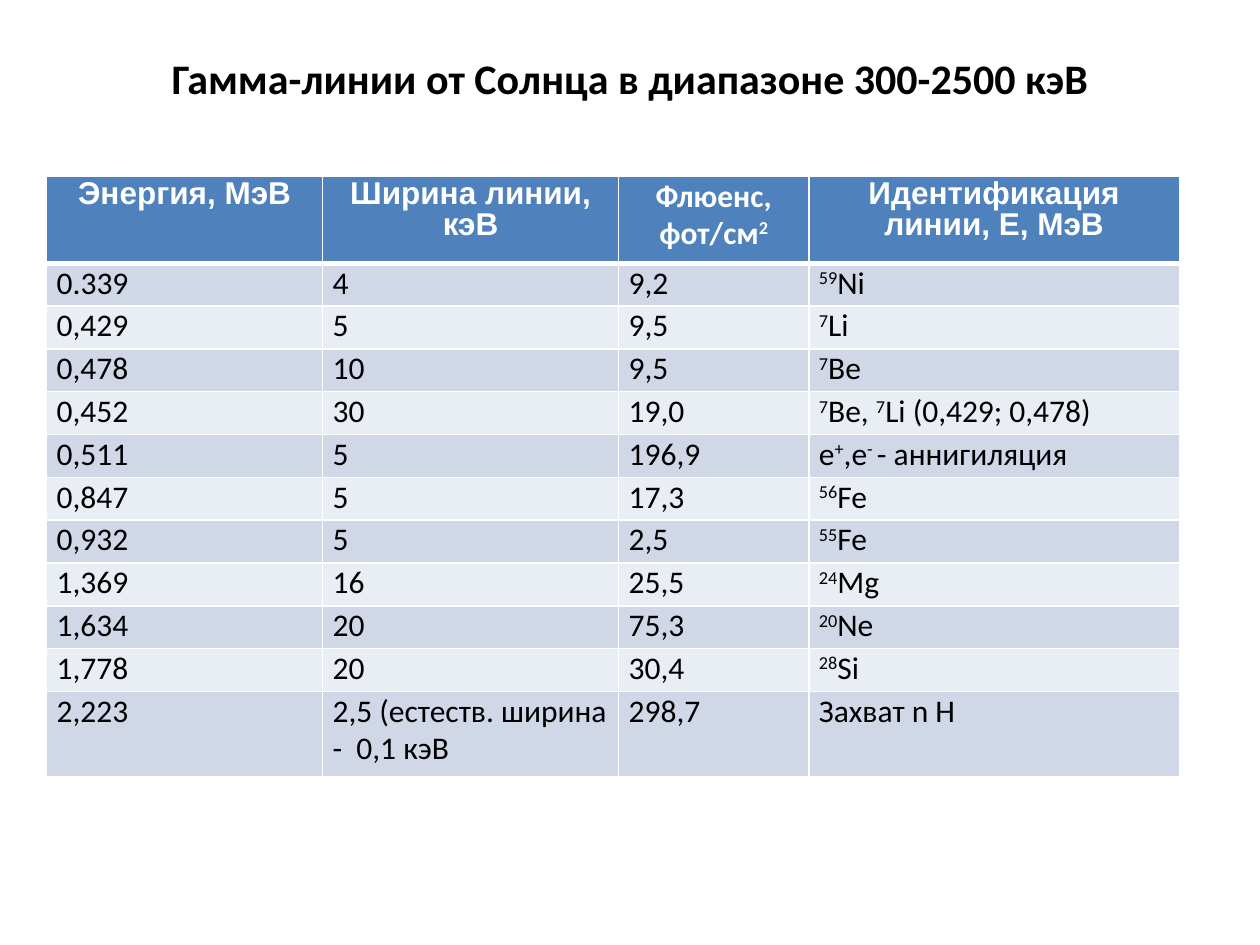
from lxml import etree
from pptx import Presentation
from pptx import util as u
from pptx.dml.color import RGBColor
from pptx.enum import text
from pptx.oxml.ns import qn

BLACK = RGBColor(0x00, 0x00, 0x00)
WHITE = RGBColor(0xFF, 0xFF, 0xFF)
HEADER_BLUE = RGBColor(0x4F, 0x81, 0xBD)
BAND_DARK = RGBColor(0xD0, 0xD8, 0xE8)
BAND_LIGHT = RGBColor(0xE9, 0xED, 0xF4)

# Text between a pair of ^ marks is superscript
HEADINGS = ["Энергия, МэВ", "Ширина линии, кэВ", "Флюенс, фот/см^2^",
            "Идентификация линии, Е, МэВ"]
GAMMA_LINES = [
    ["0.339", "4", "9,2", "^59^Ni"],
    ["0,429", "5", "9,5", "^7^Li"],
    ["0,478", "10", "9,5", "^7^Be"],
    ["0,452", "30", "19,0", "^7^Be, ^7^Li (0,429; 0,478)"],
    ["0,511", "5", "196,9", "e^+^,e^- ^- аннигиляция"],
    ["0,847", "5", "17,3", "^56^Fe"],
    ["0,932", "5", "2,5", "^55^Fe"],
    ["1,369", "16", "25,5", "^24^Mg"],
    ["1,634", "20", "75,3", "^20^Ne"],
    ["1,778", "20", "30,4", "^28^Si"],
    ["2,223", "2,5 (естеств. ширина -  0,1 кэВ", "298,7", "Захват n H"],
]
COLUMN_WIDTHS = [2.19, 2.35, 1.51, 2.94]
ROW_HEIGHTS = [0.69] + [0.34] * 10 + [0.68]


def set_values(target, values):
    for name, value in values.items():
        setattr(target, name, value)


class SlideBuilder:
    title_font = {"name": "Calibri", "size": u.Pt(24), "bold": True}
    body_font = {"name": "Calibri", "size": u.Pt(18), "bold": False}
    heading_font = {**body_font, "bold": True}
    center = text.PP_ALIGN.CENTER

    def __init__(self, deck):
        self.page = deck.slides.add_slide(deck.slide_layouts[5])

    def fill_para(self, para, content, font, color, layout):
        set_values(para, layout)
        for index, piece in enumerate(content.split("^")):
            if not piece:
                continue
            span = para.add_run()
            span.text = piece
            set_values(span.font, font)
            span.font.color.rgb = color
            if index % 2:
                span._r.get_or_add_rPr().set("baseline", "30000")

    def title(self, content, left, top, width, height):
        box = self.page.shapes.title
        set_values(box, {"left": u.Inches(left), "top": u.Inches(top),
                         "width": u.Inches(width), "height": u.Inches(height)})
        set_values(box.text_frame, {"word_wrap": True,
                                    "vertical_anchor": text.MSO_ANCHOR.MIDDLE})
        self.fill_para(box.text_frame.paragraphs[0], content, self.title_font,
                       BLACK, {"alignment": self.center})

    def borders(self, cell, widths):
        properties = cell._tc.get_or_add_tcPr()
        for index, (side, points) in enumerate(widths.items()):
            line = etree.Element(qn("a:ln" + side), w=str(u.Pt(points)))
            fill = etree.SubElement(line, qn("a:solidFill"))
            etree.SubElement(fill, qn("a:srgbClr"), val=str(WHITE))
            properties.insert(index, line)

    def cell(self, cell, content, fill, font, color, layout, top_margin):
        set_values(cell, {"margin_left": u.Inches(0.08),
                          "margin_right": u.Inches(0.08),
                          "margin_top": u.Inches(top_margin),
                          "margin_bottom": 0})
        cell.fill.solid()
        cell.fill.fore_color.rgb = fill
        self.fill_para(cell.text_frame.paragraphs[0], content, font, color,
                       layout)

    def table(self, left, top, headings, records):
        frame = self.page.shapes.add_table(
            len(records) + 1, len(headings), u.Inches(left), u.Inches(top),
            u.Inches(sum(COLUMN_WIDTHS)), u.Inches(sum(ROW_HEIGHTS)))
        grid = frame.table
        for column, width in zip(grid.columns, COLUMN_WIDTHS):
            column.width = u.Inches(width)
        for row, height in zip(grid.rows, ROW_HEIGHTS):
            row.height = u.Inches(height)

        # Header row: Arial, except the heading with a superscript
        for column, heading in enumerate(headings):
            arial = "^" not in heading
            font = {**self.heading_font, "name": "Arial" if arial else "Calibri"}
            layout = {"alignment": self.center,
                      "line_spacing": 0.87 if arial else 0.96}
            cell = grid.cell(0, column)
            self.cell(cell, heading, HEADER_BLUE, font, WHITE, layout,
                      0.03 if arial else 0.01)
            self.borders(cell, {"L": 1, "R": 1, "T": 1, "B": 3})

        # Banded data rows
        for row, record in enumerate(records, start=1):
            fill = BAND_DARK if row % 2 else BAND_LIGHT
            for column, value in enumerate(record):
                cell = grid.cell(row, column)
                self.cell(cell, value, fill, self.body_font, BLACK,
                          {"line_spacing": 0.96}, 0.01)
                self.borders(cell, {"L": 1, "R": 1,
                                    "T": 3 if row == 1 else 1, "B": 1})


def main():
    deck = Presentation()
    set_values(deck, {"slide_width": u.Inches(10), "slide_height": u.Inches(7.5)})
    builder = SlideBuilder(deck)
    builder.title("Гамма-линии от Солнца в диапазоне 300-2500 кэВ",
                  0.5, 0.17, 9, 0.9)
    builder.table(0.37, 1.4, HEADINGS, GAMMA_LINES)
    deck.save("out.pptx")


if __name__ == "__main__":
    main()
